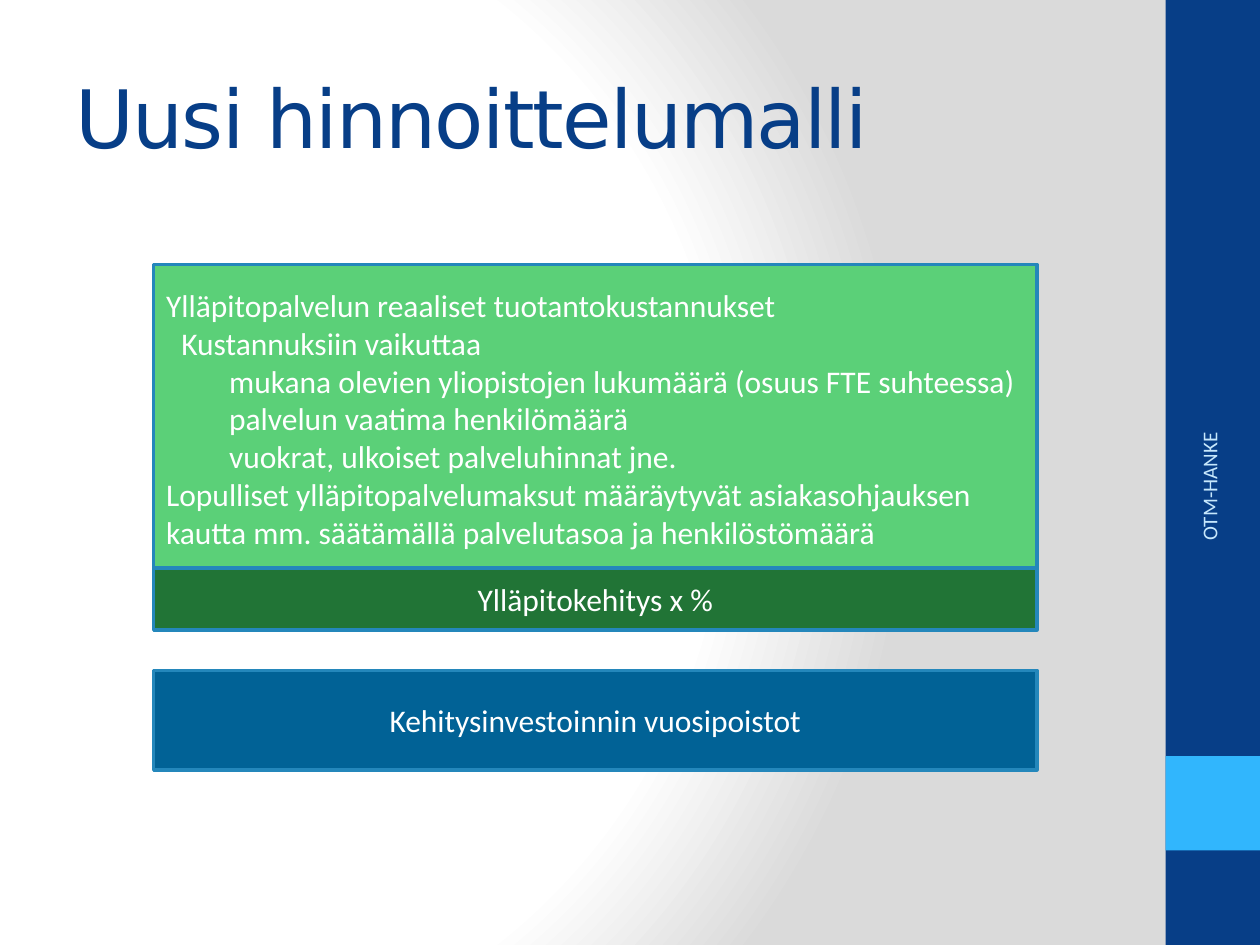
from pptx import Presentation
from pptx.dml.color import RGBColor
from pptx.enum.shapes import MSO_SHAPE
from pptx.enum.text import MSO_ANCHOR, PP_ALIGN
from pptx.oxml import parse_xml
from pptx.oxml.ns import nsdecls, qn
from pptx.util import Inches, Pt

NAVY, SKY, PALE, WHITE = "073E87", "31B6FD", "C6E7FC", "FFFFFF"
GREEN, DARK_GREEN, BLUE, OUTLINE = "5BD078", "217436", "016296", "2487BB"
BAND_LEFT, BAND_WIDTH = 9.25, 0.75
BOX_LEFT, BOX_WIDTH = 1.22, 7.01
COST_LINES = [
    ("Ylläpitopalvelun reaaliset tuotantokustannukset", 0, 0),
    ("Kustannuksiin vaikuttaa", 0, 0.12),
    ("mukana olevien yliopistojen lukumäärä (osuus FTE suhteessa)", 1, 0.5),
    ("palvelun vaatima henkilömäärä", 1, 0.5),
    ("vuokrat, ulkoiset palveluhinnat jne.", 1, 0.5),
    ("Lopulliset ylläpitopalvelumaksut määräytyvät asiakasohjauksen kautta "
     "mm. säätämällä palvelutasoa ja henkilöstömäärä", 0, 0),
]


def color(value):
    """Turn a hex string into a colour."""
    return RGBColor.from_string(value)


def set_background(slide):
    """Give the slide a radial gradient from white to grey."""
    slide.background.fill.solid()
    solid = slide.background.fill._xPr.find(qn("a:solidFill"))
    stops = "".join(
        f'<a:gs pos="{share * 1000}"><a:srgbClr val="{value}"/></a:gs>'
        for share, value in ((0, WHITE), (75, WHITE), (100, "DADADA")))
    gradient = parse_xml(
        f'<a:gradFill {nsdecls("a")} rotWithShape="1"><a:gsLst>{stops}</a:gsLst>'
        '<a:path path="circle"><a:fillToRect l="20000" t="50000" r="100000" b="50000"/>'
        '</a:path></a:gradFill>')
    solid.getparent().replace(solid, gradient)


def place(shape, left, top, width, height):
    """Move and size a shape, in inches."""
    shape.left, shape.top = Inches(left), Inches(top)
    shape.width, shape.height = Inches(width), Inches(height)


def style(para, size, value, align, font="Calibri"):
    """Set the font and alignment of a paragraph."""
    para.alignment = align
    para.font.size = Pt(size)
    para.font.name = font
    para.font.color.rgb = color(value)


def add_rectangle(slide, left, top, width, height, fill, line=None):
    """Add a flat rectangle with an optional outline."""
    box = slide.shapes.add_shape(
        MSO_SHAPE.RECTANGLE, Inches(left), Inches(top), Inches(width), Inches(height))
    box.shadow.inherit = False
    box.fill.solid()
    box.fill.fore_color.rgb = color(fill)
    if line:
        box.line.color.rgb = color(line)
        box.line.width = Pt(2)
    else:
        box.line.fill.background()
    return box


def add_price_box(slide, top, height, fill, lines, align=PP_ALIGN.CENTER):
    """Add an outlined box holding (text, level, indent) lines."""
    box = add_rectangle(slide, BOX_LEFT, top, BOX_WIDTH, height, fill, OUTLINE)
    frame = box.text_frame
    frame.word_wrap = True
    frame.vertical_anchor = MSO_ANCHOR.MIDDLE
    for index, (text, level, indent) in enumerate(lines):
        para = frame.add_paragraph() if index else frame.paragraphs[0]
        para.text = text
        para.level = level
        style(para, 18, WHITE, align)
        properties = para._p.get_or_add_pPr()
        properties.set("marL", str(Inches(indent)))
        properties.set("indent", "0")


def set_title(slide, text):
    """Format the title placeholder."""
    title = slide.shapes.title
    place(title, 0.5, 0.3, 8.33, 1.25)
    title.text_frame.text = text
    title.text_frame.vertical_anchor = MSO_ANCHOR.MIDDLE
    para = title.text_frame.paragraphs[0]
    style(para, 46, NAVY, PP_ALIGN.LEFT, "DejaVu Sans")
    para.runs[0].font._element.set("spc", "-100")


def add_side_label(slide, text):
    """Add the label that runs up the side band."""
    box = slide.shapes.add_textbox(0, 0, 0, 0)
    place(box, 8.3, 4.43, 2.59, 0.4)
    box.rotation = 270
    box.text_frame.word_wrap = True
    box.text_frame.vertical_anchor = MSO_ANCHOR.MIDDLE
    para = box.text_frame.paragraphs[0]
    para.text = text
    style(para, 12, PALE, PP_ALIGN.RIGHT)


def main():
    """Build the pricing model slide."""
    deck = Presentation()
    deck.slide_width, deck.slide_height = Inches(10), Inches(7.5)
    slide = deck.slides.add_slide(deck.slide_layouts[5])
    set_background(slide)
    add_rectangle(slide, BAND_LEFT, 0, BAND_WIDTH, 7.5, NAVY)
    add_rectangle(slide, BAND_LEFT, 6, BAND_WIDTH, BAND_WIDTH, SKY)
    set_title(slide, "Uusi hinnoittelumalli")
    add_side_label(slide, "OTM-HANKE")
    add_price_box(slide, 2.1, 2.44, GREEN, COST_LINES, PP_ALIGN.LEFT)
    add_price_box(slide, 4.51, 0.49, DARK_GREEN, [("Ylläpitokehitys x %", 0, 0)])
    add_price_box(slide, 5.32, 0.79, BLUE, [("Kehitysinvestoinnin vuosipoistot", 0, 0)])
    deck.save("out.pptx")


if __name__ == "__main__":
    main()
